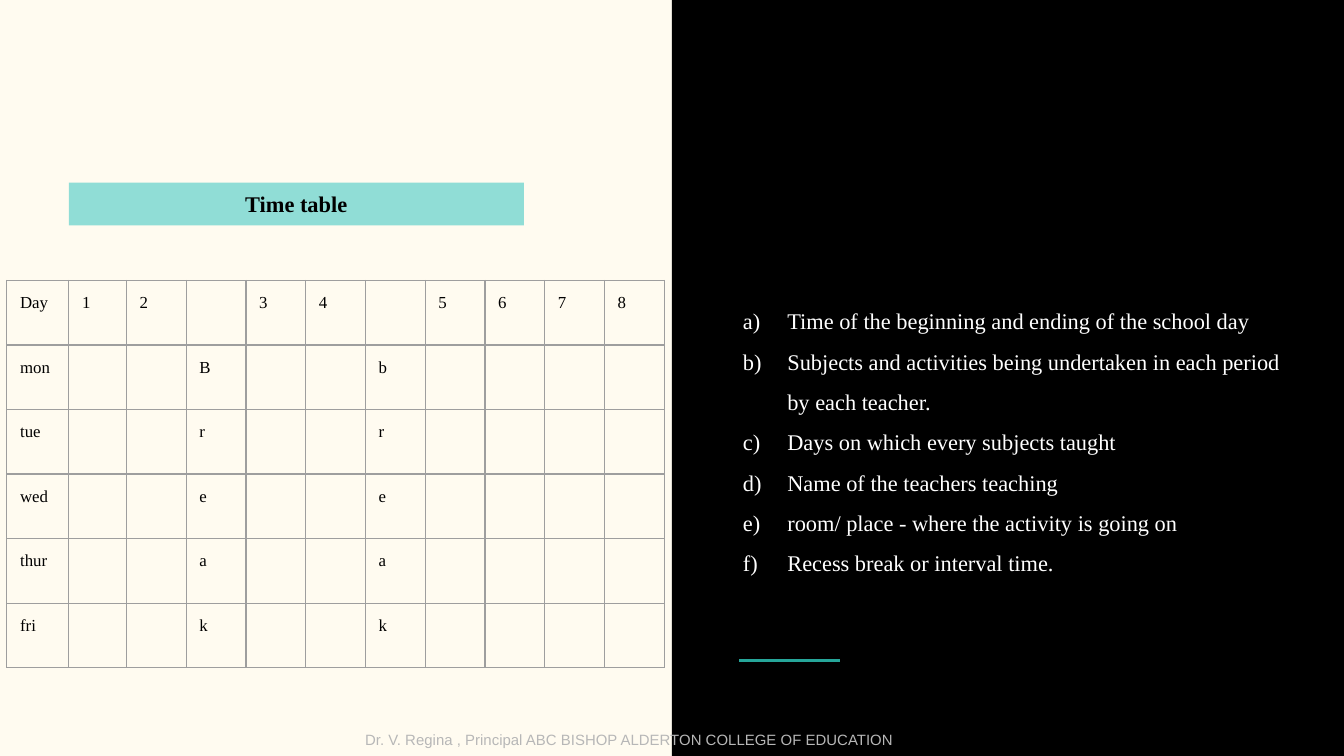
from dataclasses import dataclass

from lxml import etree
from pptx import Presentation
from pptx.dml.color import RGBColor
from pptx.enum.shapes import MSO_CONNECTOR, MSO_SHAPE
from pptx.enum.text import MSO_ANCHOR, MSO_AUTO_SIZE, PP_ALIGN
from pptx.oxml.ns import qn
from pptx.util import Cm, Pt

RECTANGLE = MSO_SHAPE.RECTANGLE
STRAIGHT = MSO_CONNECTOR.STRAIGHT
TOP, MIDDLE = MSO_ANCHOR.TOP, MSO_ANCHOR.MIDDLE
LEFT, CENTER = PP_ALIGN.LEFT, PP_ALIGN.CENTER
NO_AUTOFIT = MSO_AUTO_SIZE.NONE

COLORS = {
    "cream": "FFFBF0",
    "black": "000000",
    "white": "FFFFFF",
    "aqua": "90DDD6",
    "teal": "26A69A",
    "grid": "9E9E9E",
    "footer": "B7B7B7",
}
SERIF, SANS = "Times New Roman", "Arial"
INSET = Cm(0.25)

PERIODS = ["1", "2", "", "3", "4", "", "5", "6", "7", "8"]
DAYS = ["mon", "tue", "wed", "thur", "fri"]
BREAKS = {3: "Break", 6: "break"}  # column: word spelled down the days
COLUMN_WIDTHS = [1.17, 1.09] + [1.13] * 9
ROW_HEIGHT = 1.22

DETAILS = [
    "Time of the beginning and ending of the school day",
    "Subjects and activities being undertaken in each period by each teacher.",
    "Days on which every subjects taught",
    "Name of the teachers teaching",
    "room/ place - where the activity is going on",
    "Recess break or interval time.",
]
FOOTER = "Dr. V. Regina , Principal ABC BISHOP ALDERTON COLLEGE OF EDUCATION"


@dataclass(frozen=True)
class Box:
    left: float
    top: float
    width: float
    height: float

    def lengths(self) -> tuple:
        return Cm(self.left), Cm(self.top), Cm(self.width), Cm(self.height)


@dataclass(frozen=True)
class TextStyle:
    size: float
    color: str
    font: str = SERIF
    bold: bool = False
    align: PP_ALIGN = LEFT


def rgb(name: str) -> RGBColor:
    return RGBColor.from_string(COLORS[name])


def style_paragraph(paragraph, style: TextStyle) -> None:
    paragraph.alignment = style.align
    font = paragraph.font
    font.name, font.size, font.bold = style.font, Pt(style.size), style.bold
    font.color.rgb = rgb(style.color)


def place(shape, box: Box, anchor: MSO_ANCHOR):
    """Position a text shape and return its prepared text frame."""
    shape.left, shape.top, shape.width, shape.height = box.lengths()
    frame = shape.text_frame
    frame.word_wrap = True
    frame.auto_size = NO_AUTOFIT
    frame.vertical_anchor = anchor
    frame.margin_left = frame.margin_right = INSET
    frame.margin_top = frame.margin_bottom = INSET
    return frame


def add_color(parent, name: str) -> None:
    etree.SubElement(parent, qn("a:srgbClr"), val=COLORS[name])


def add_lettering(paragraph, color: str) -> None:
    properties = paragraph._p.get_or_add_pPr()
    properties.set("marL", str(Cm(1.27)))
    properties.set("indent", str(-Cm(0.84)))
    add_color(etree.SubElement(properties, qn("a:buClr")), color)
    etree.SubElement(properties, qn("a:buFontTx"))
    etree.SubElement(properties, qn("a:buAutoNum"), type="alphaLcParenR")


def add_borders(cell) -> None:
    properties = cell._tc.get_or_add_tcPr()
    for side in ("lnL", "lnR", "lnT", "lnB"):
        border = etree.SubElement(properties, qn(f"a:{side}"), w=str(Pt(0.75)))
        add_color(etree.SubElement(border, qn("a:solidFill")), "grid")


def add_panel(slide) -> None:
    panel = slide.shapes.add_shape(RECTANGLE, *Box(12.7, 0, 12.7, 14.29).lengths())
    panel.shadow.inherit = False
    panel.fill.solid()
    panel.fill.fore_color.rgb = rgb("black")
    panel.line.fill.background()
    slide.shapes._spTree.insert(2, panel._element)  # behind the placeholders


def add_accent(slide) -> None:
    accent = slide.shapes.add_connector(STRAIGHT, Cm(13.97), Cm(12.48), Cm(15.88), Cm(12.48))
    accent.line.color.rgb = rgb("teal")
    accent.line.width = Pt(1.5)
    etree.SubElement(accent._element.spPr, qn("a:effectLst"))


def fill_title(slide) -> None:
    title = slide.shapes.title
    frame = place(title, Box(1.3, 3.45, 8.6, 0.81), MIDDLE)
    title.fill.solid()
    title.fill.fore_color.rgb = rgb("aqua")
    frame.text = "Time table"
    style_paragraph(frame.paragraphs[0], TextStyle(12, "black", bold=True, align=CENTER))


def fill_details(slide) -> None:
    frame = place(slide.placeholders[1], Box(13.36, 5.31, 11.38, 5.69), TOP)
    frame.text = "\n".join(DETAILS)
    for paragraph in frame.paragraphs:
        paragraph.line_spacing = 1.5
        paragraph.space_before = paragraph.space_after = Pt(0)
        add_lettering(paragraph, "white")
        style_paragraph(paragraph, TextStyle(12, "white"))


def timetable_rows() -> list[list[str]]:
    rows = [["Day"] + PERIODS]
    for index, day in enumerate(DAYS):
        row = [day] + [""] * len(PERIODS)
        for column, word in BREAKS.items():
            row[column] = word[index]
        rows.append(row)
    return rows


def add_timetable(slide) -> None:
    rows = timetable_rows()
    box = Box(0.13, 5.3, sum(COLUMN_WIDTHS), ROW_HEIGHT * len(rows))
    table = slide.shapes.add_table(len(rows), len(COLUMN_WIDTHS), *box.lengths()).table
    table.first_row = table.horz_banding = False
    for column, width in zip(table.columns, COLUMN_WIDTHS):
        column.width = Cm(width)
    for table_row, words in zip(table.rows, rows):
        table_row.height = Cm(ROW_HEIGHT)
        for cell, word in zip(table_row.cells, words):
            cell.text = word
            cell.margin_left = cell.margin_right = INSET
            cell.margin_top = cell.margin_bottom = INSET
            style_paragraph(cell.text_frame.paragraphs[0], TextStyle(9, "black"))
            add_borders(cell)
            cell.fill.background()


def add_footer(slide) -> None:
    box = Box(6.65, 13.56, 13.84, 0.71)
    frame = place(slide.shapes.add_textbox(*box.lengths()), box, TOP)
    frame.text = FOOTER
    style_paragraph(frame.paragraphs[0], TextStyle(8, "footer", font=SANS))


def main() -> None:
    presentation = Presentation()
    presentation.slide_width, presentation.slide_height = Cm(25.4), Cm(14.29)
    slide = presentation.slides.add_slide(presentation.slide_layouts[1])
    slide.background.fill.solid()
    slide.background.fill.fore_color.rgb = rgb("cream")

    # Right-hand panel
    add_panel(slide)
    add_accent(slide)
    fill_details(slide)

    # Timetable side
    fill_title(slide)
    add_timetable(slide)

    add_footer(slide)
    presentation.save("out.pptx")


if __name__ == "__main__":
    main()
